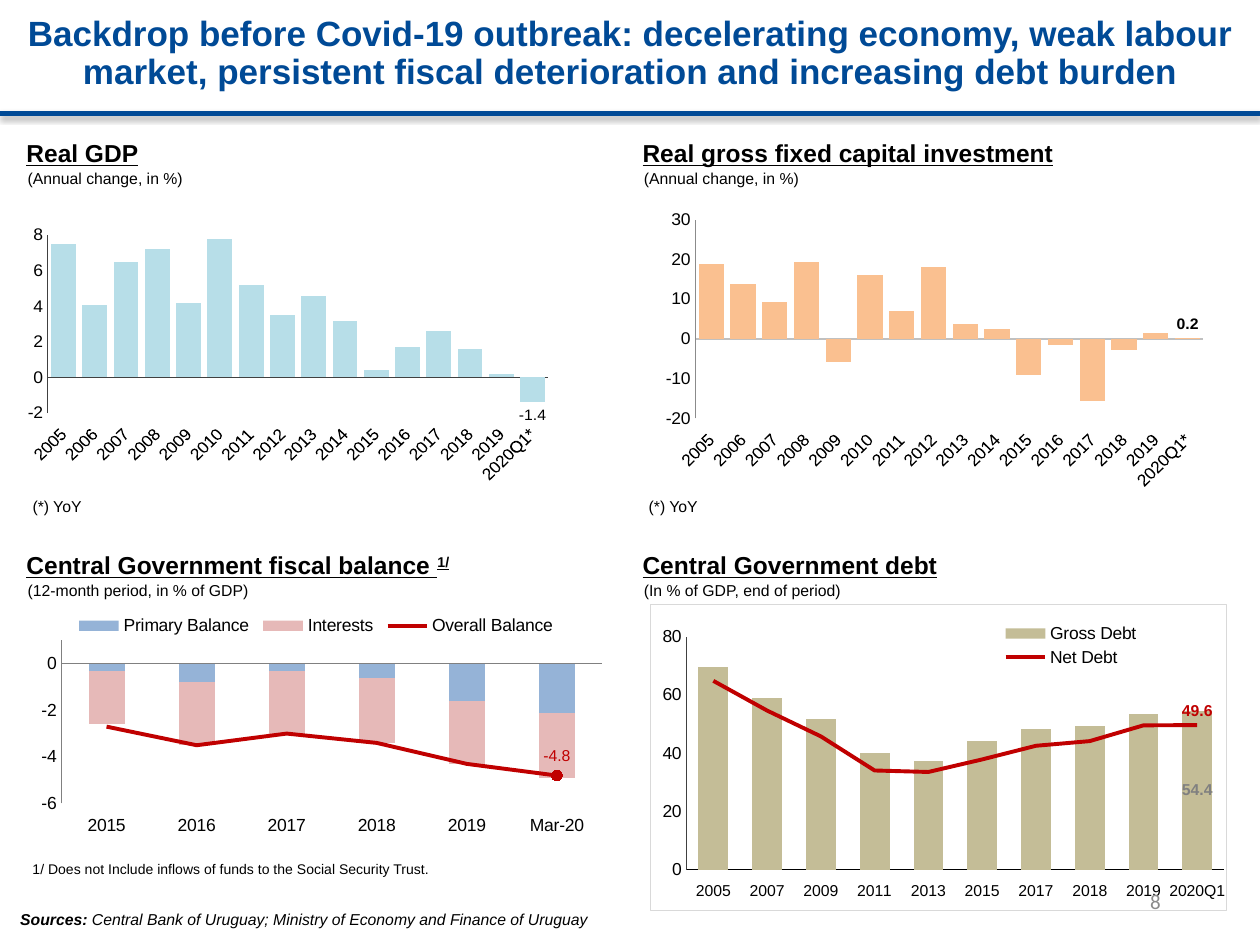
"""Build a slide of four charts on the economy before the Covid-19 outbreak."""
import pptx
import pptx.chart.data
import pptx.dml.color
import pptx.enum.chart
import pptx.enum.shapes
import pptx.enum.text
import pptx.oxml
import pptx.oxml.ns
import pptx.util
from pptx.util import Inches

BLACK = pptx.dml.color.RGBColor(0x00, 0x00, 0x00)
WHITE = pptx.dml.color.RGBColor(0xFF, 0xFF, 0xFF)
NAVY = pptx.dml.color.RGBColor(0x00, 0x4A, 0x96)
AXIS_GREY = pptx.dml.color.RGBColor(0x80, 0x80, 0x80)
AXIS_DARK = pptx.dml.color.RGBColor(0x40, 0x40, 0x40)
AXIS_LIGHT = pptx.dml.color.RGBColor(0xC0, 0xC0, 0xC0)
BORDER_GREY = pptx.dml.color.RGBColor(0xD9, 0xD9, 0xD9)
NUMBER_GREY = pptx.dml.color.RGBColor(0x8B, 0x8B, 0x8B)
LIGHT_BLUE = pptx.dml.color.RGBColor(0xB7, 0xDE, 0xE8)
ORANGE = pptx.dml.color.RGBColor(0xFA, 0xC0, 0x90)
BLUE = pptx.dml.color.RGBColor(0x95, 0xB3, 0xD7)
PINK = pptx.dml.color.RGBColor(0xE6, 0xB9, 0xB8)
TAN = pptx.dml.color.RGBColor(0xC4, 0xBD, 0x97)
RED = pptx.dml.color.RGBColor(0xC0, 0x00, 0x00)

MIDDLE = pptx.enum.text.MSO_ANCHOR.MIDDLE
TOP = pptx.enum.text.MSO_ANCHOR.TOP
BOTTOM = pptx.enum.text.MSO_ANCHOR.BOTTOM
LABEL = pptx.enum.chart.XL_LABEL_POSITION
LEGEND = pptx.enum.chart.XL_LEGEND_POSITION
CHART_TYPE = pptx.enum.chart.XL_CHART_TYPE
CHART_NS = pptx.oxml.ns.nsdecls("c", "a")

presentation = pptx.Presentation()
presentation.slide_width, presentation.slide_height = Inches(10), Inches(7.5)
slide = presentation.slides.add_slide(presentation.slide_layouts[5])


def add_run(paragraph, text, size=9, color=BLACK, bold=False, italic=False, underline=False, name="Arial"):
    run = paragraph.add_run()
    run.text = text
    font = run.font
    font.name, font.size, font.color.rgb = name, pptx.util.Pt(size), color
    font.bold, font.italic, font.underline = bold, italic, underline
    return run


def add_text_box(left, top, width, height, anchor=TOP, side=0.1, edge=0.05):
    shape = slide.shapes.add_textbox(Inches(left), Inches(top), Inches(width), Inches(height))
    frame = shape.text_frame
    frame.word_wrap, frame.vertical_anchor = True, anchor
    frame.margin_left = frame.margin_right = Inches(side)
    frame.margin_top = frame.margin_bottom = Inches(edge)
    return frame.paragraphs[0]


title = slide.shapes.title
title.left, title.top, title.width, title.height = Inches(-0.07), Inches(-0.01), Inches(10.15), Inches(0.88)
title.text_frame.word_wrap, title.text_frame.vertical_anchor = True, MIDDLE
title.text_frame.auto_size = pptx.enum.text.MSO_AUTO_SIZE.NONE
title_paragraph = title.text_frame.paragraphs[0]
title_paragraph.alignment, title_paragraph.line_spacing = pptx.enum.text.PP_ALIGN.CENTER, 0.9
add_run(title_paragraph, "Backdrop before Covid-19 outbreak: decelerating economy, weak labour "
        "market, persistent fiscal deterioration and increasing debt burden", size=20, color=NAVY, bold=True)

rule = slide.shapes.add_connector(
    pptx.enum.shapes.MSO_CONNECTOR.STRAIGHT, Inches(0), Inches(0.9), Inches(10), Inches(0.9))
rule.line.color.rgb, rule.line.width = NAVY, pptx.util.Pt(3)
rule._element.spPr.append(pptx.oxml.parse_xml(
    f'<a:effectLst {pptx.oxml.ns.nsdecls("a")}><a:outerShdw blurRad="40000" dist="23000" dir="5400000" '
    'rotWithShape="0"><a:srgbClr val="000000"><a:alpha val="35000"/></a:srgbClr></a:outerShdw></a:effectLst>'))

years = [str(year) for year in range(2005, 2020)] + ["2020Q1*"]
panels = [
    dict(heading="Real GDP", unit="(Annual change, in %)", at=(0.16, 1.08),
         box=(0.22, 1.67, 4.55, 2.17), plot=(0.035, 0.095, 0.873, 0.68), scale=(-2, 8, 2), gap=26,
         lines=(AXIS_DARK, 1, AXIS_DARK), categories=years,
         series=[("Real GDP", LIGHT_BLUE, [7.5, 4.1, 6.5, 7.2, 4.2, 7.8, 5.2, 3.5, 4.6, 3.2, 0.4, 1.7, 2.6, 1.6,
                                           0.2, -1.4], (LABEL.OUTSIDE_END, BLACK, False))]),
    dict(heading="Real gross fixed capital investment", unit="(Annual change, in %)", at=(5.05, 1.08),
         box=(5.05, 1.6, 4.69, 2.29), plot=(0.1, 0.065, 0.86, 0.71), scale=(-20, 30, 10), gap=26,
         lines=(AXIS_LIGHT, 1.19, NUMBER_GREY), categories=years,
         series=[("Investment", ORANGE, [18.9, 13.9, 9.3, 19.3, -5.8, 16.0, 7.0, 18.2, 3.8, 2.4, -9.2, -1.6, -15.7,
                                         -2.7, 1.4, 0.2], (LABEL.OUTSIDE_END, BLACK, True))]),
    dict(heading="Central Government fiscal balance ", note="1/", unit="(12-month period, in % of GDP)", at=(0.16, 4.35),
         box=(0.18, 4.83, 4.75, 1.95), plot=(0.065, 0.13, 0.903, 0.664), scale=(-6, 1, 2), gap=150,
         lines=(AXIS_GREY, 0.75, AXIS_GREY), legend=(LEGEND.TOP, (0.08, 0.02, 0.82, 0.1)),
         categories=["2015", "2016", "2017", "2018", "2019", "Mar-20"],
         series=[("Primary Balance", BLUE, [-0.3, -0.8, -0.3, -0.6, -1.6, -2.1], None),
                 ("Interests", PINK, [-2.3, -2.7, -2.7, -2.8, -2.7, -2.8], None),
                 ("Overall Balance", RED, [-2.7, -3.5, -3.0, -3.4, -4.3, -4.8], (LABEL.ABOVE, RED, False))]),
    dict(heading="Central Government debt", unit="(In % of GDP, end of period)", at=(5.05, 4.35),
         box=(5.16, 4.79, 4.58, 2.44), plot=(0.062, 0.106, 0.934, 0.761), scale=(0, 80, 20), gap=80,
         lines=(BLACK, 0.5, AXIS_DARK), legend=(LEGEND.RIGHT, (0.6, 0.05, 0.26, 0.17)),
         categories=["2005", "2007", "2009", "2011", "2013", "2015", "2017", "2018", "2019", "2020Q1"],
         series=[("Gross Debt", TAN, [69.7, 58.8, 51.6, 40.0, 37.4, 44.3, 48.1, 49.3, 53.3, 54.4],
                  (LABEL.CENTER, AXIS_GREY, True)),
                 ("Net Debt", RED, [64.8, 54.6, 45.7, 34.0, 33.5, 37.8, 42.5, 44.1, 49.5, 49.6],
                  (LABEL.ABOVE, RED, True))]),
]

for panel in panels:
    left, top = panel["at"]
    heading = add_text_box(left, top, 4.57, 0.27, MIDDLE, 0.05, 0.03)
    add_run(heading, panel["heading"], size=14, bold=True, underline=True)
    if "note" in panel:
        note_run = add_run(heading, panel["note"], size=14, bold=True, underline=True)
        note_run._r.get_or_add_rPr().set("baseline", "30000")
    add_run(add_text_box(left, top + 0.26, 3.82, 0.15, BOTTOM, 0.06, 0), panel["unit"])

    combined = "legend" in panel
    chart_data = pptx.chart.data.CategoryChartData()
    chart_data.categories = panel["categories"]
    for name, color, values, label in panel["series"]:
        chart_data.add_series(name, values)
    chart_type = CHART_TYPE.COLUMN_STACKED if combined else CHART_TYPE.COLUMN_CLUSTERED
    chart = slide.shapes.add_chart(chart_type, *map(Inches, panel["box"]), chart_data).chart
    chart.has_title, chart.has_legend = False, combined
    chart.font.name, chart.font.size, chart.font.color.rgb = "Arial", pptx.util.Pt(10), BLACK
    bar_plot = chart.plots[0]
    bar_plot.gap_width, bar_plot.vary_by_categories = panel["gap"], False
    bar_plot.overlap = 100 if combined else 0

    category_axis, value_axis = chart.category_axis, chart.value_axis
    category_color, category_width, value_color = panel["lines"]
    for axis, color, width in ((category_axis, category_color, category_width), (value_axis, value_color, 0.5)):
        axis.has_major_gridlines = False
        axis.major_tick_mark = axis.minor_tick_mark = pptx.enum.chart.XL_TICK_MARK.NONE
        axis.format.line.color.rgb, axis.format.line.width = color, pptx.util.Pt(width)
        axis.tick_labels.font.size = pptx.util.Pt(10)
    category_axis.tick_label_position = pptx.enum.chart.XL_TICK_LABEL_POSITION.LOW
    value_axis.minimum_scale, value_axis.maximum_scale, value_axis.major_unit = panel["scale"]
    value_axis.tick_labels.number_format = "0"
    value_axis.tick_labels.number_format_is_linked = False
    if panel["categories"] is years:
        category_axis._element.find(".//" + pptx.oxml.ns.qn("a:bodyPr")).set("rot", "-2700000")

    plot_area = chart._chartSpace.chart.plotArea
    layouts = [(plot_area, 0, panel["plot"], '<c:layoutTarget val="inner"/>')]
    if combined:
        bar_chart = bar_plot._element
        line_chart = pptx.oxml.parse_xml(
            f'<c:lineChart {CHART_NS}><c:grouping val="standard"/><c:varyColors val="0"/></c:lineChart>')
        line_series = bar_plot.series[-1]._element
        for element in line_series.findall(pptx.oxml.ns.qn("c:invertIfNegative")):
            line_series.remove(element)
        line_chart.append(line_series)
        line_chart.append(pptx.oxml.parse_xml(f'<c:marker {CHART_NS} val="1"/>'))
        for axis in (category_axis, value_axis):
            axis_id = axis._element.find(pptx.oxml.ns.qn("c:axId")).get("val")
            line_chart.append(pptx.oxml.parse_xml(f'<c:axId {CHART_NS} val="{axis_id}"/>'))
        bar_chart.addnext(line_chart)
        chart.legend.position, legend_box = panel["legend"]
        chart.legend.include_in_layout = False
        chart.legend.font.size = pptx.util.Pt(10)
        layouts.append((chart.legend._element, 1, legend_box, ""))

    for parent, index, box, target in layouts:
        for element in parent.findall(pptx.oxml.ns.qn("c:layout")):
            parent.remove(element)
        x, y, width, height = box
        parent.insert(index, pptx.oxml.parse_xml(
            f'<c:layout {CHART_NS}><c:manualLayout>{target}<c:xMode val="edge"/><c:yMode val="edge"/>'
            f'<c:x val="{x}"/><c:y val="{y}"/><c:w val="{width}"/><c:h val="{height}"/>'
            '</c:manualLayout></c:layout>'))

    all_series = [series for plot in chart.plots for series in plot.series]
    for series, (name, color, values, label) in zip(all_series, panel["series"]):
        if color == RED:
            series.format.line.color.rgb, series.format.line.width = RED, pptx.util.Pt(2.25)
            series.marker.style = pptx.enum.chart.XL_MARKER_STYLE.NONE
            series.smooth = False
        else:
            series.format.fill.solid()
            series.format.fill.fore_color.rgb = color
            series.invert_if_negative = False
        if label:
            data_label = series.points[len(values) - 1].data_label
            position, label_color, bold = label
            font = data_label.font
            font.name, font.size, font.bold, font.color.rgb = "Arial", pptx.util.Pt(9), bold, label_color
            data_label.position = position

    if name == "Overall Balance":
        marker = all_series[-1].points[len(values) - 1].marker
        marker.style, marker.size = pptx.enum.chart.XL_MARKER_STYLE.CIRCLE, 6
        marker.format.fill.solid()
        marker.format.fill.fore_color.rgb = marker.format.line.color.rgb = RED
        point_line = all_series[-1].points[len(values) - 1].format.line
        point_line.color.rgb, point_line.width = RED, pptx.util.Pt(2.25)
    if name == "Net Debt":
        category_axis.tick_labels.font.size = pptx.util.Pt(9)
        chart._chartSpace.chart.addnext(pptx.oxml.parse_xml(
            f'<c:spPr {CHART_NS}><a:solidFill><a:srgbClr val="{WHITE}"/></a:solidFill><a:ln w="9525">'
            f'<a:solidFill><a:srgbClr val="{BORDER_GREY}"/></a:solidFill></a:ln></c:spPr>'))

for left in (0.16, 5.05):
    add_run(add_text_box(left, 3.89, 4.18, 0.25), "(*) YoY")
add_run(add_text_box(0.16, 6.78, 4.53, 0.23),
        "1/ Does not Include inflows of funds to the Social Security Trust.", size=8)
sources = add_text_box(0.07, 7.19, 9.41, 0.22, BOTTOM, 0.09, 0.04)
add_run(sources, "Sources: ", bold=True, italic=True)
add_run(sources, "Central Bank of Uruguay; Ministry of Economy and Finance of Uruguay", italic=True)
page_number = add_text_box(7.06, 6.95, 2.25, 0.4, MIDDLE)
page_number.alignment = pptx.enum.text.PP_ALIGN.RIGHT
add_run(page_number, "8", size=12, color=NUMBER_GREY, name="Calibri")

presentation.save("out.pptx")
